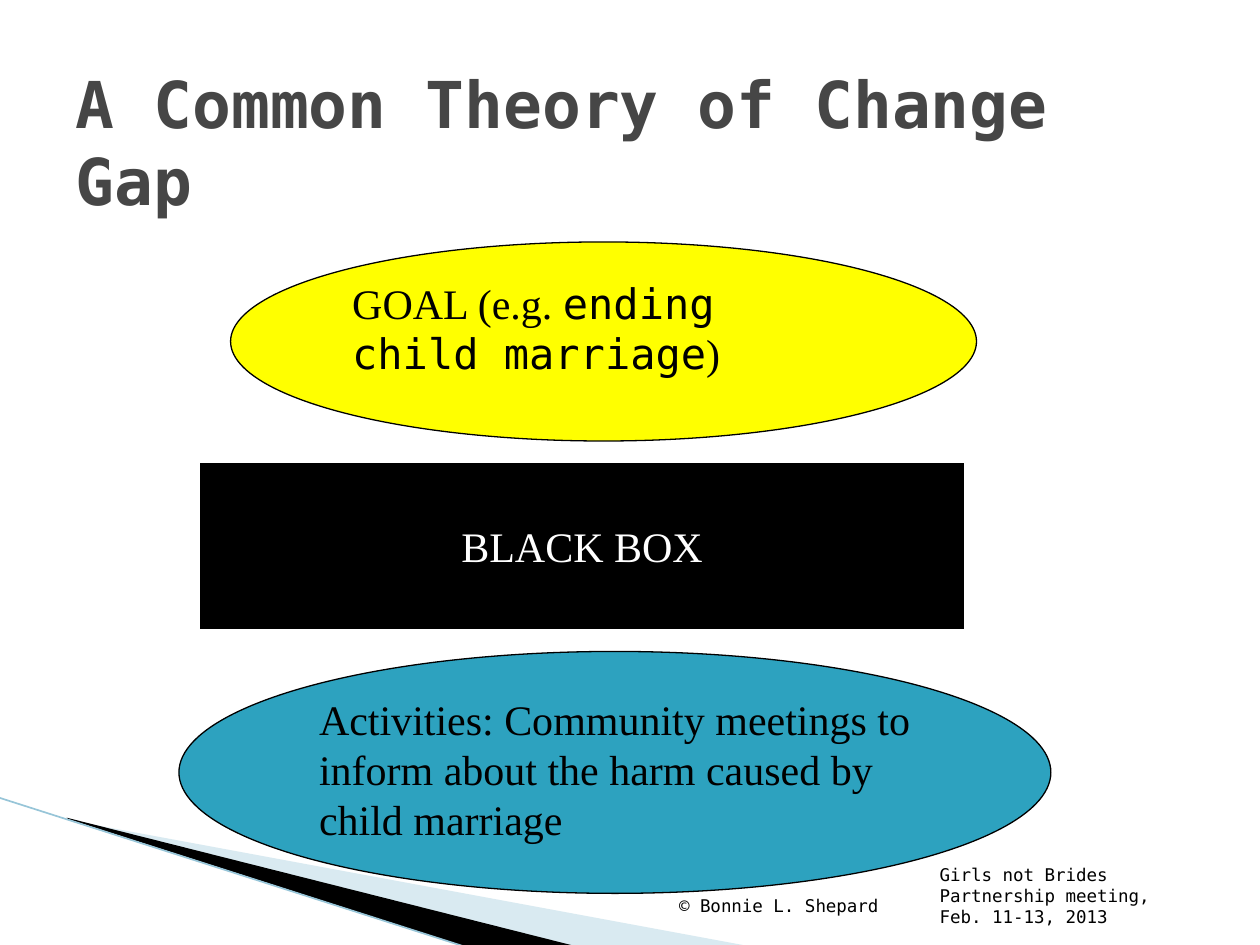
from dataclasses import dataclass

from lxml.etree import SubElement
from pptx import Presentation
from pptx.dml.color import RGBColor
from pptx.enum.shapes import MSO_CONNECTOR as Connector, MSO_SHAPE as Shape
from pptx.enum.text import MSO_ANCHOR as Anchor, MSO_AUTO_SIZE as AutoSize, PP_ALIGN as Align
from pptx.oxml.ns import qn
from pptx.util import Pt

PX = 9144


@dataclass(frozen=True)
class Theme:
    """Colours, fonts and type sizes of the slide."""
    black: str = "000000"
    white: str = "FFFFFF"
    heading: str = "464646"
    goal: str = "FFFF00"
    activities: str = "2DA2BF"
    pale_wedge: str = "A0CBDC"
    edge: str = "97C5D8"
    mono: str = "DejaVu Sans Mono"
    serif: str = "Times New Roman"
    title_size: float = 36.9
    body_size: float = 24
    small_size: float = 10
    outline: float = 0.75
    edge_width: float = 0.95


THEME = Theme()


def emu(*lengths):
    """Turn px lengths into EMU."""
    return [length * PX for length in lengths]


def apply(target, formats):
    """Set each attribute of target from a dict of format values."""
    for key, value in formats.items():
        setattr(target, key, value)


def paint(fill, colour):
    """Give a fill one solid colour."""
    fill.solid()
    fill.fore_color.rgb = RGBColor.from_string(colour)


def write(frame, runs, size, colour, align=Align.LEFT, anchor=Anchor.TOP, bold=False):
    """Write one paragraph of (text, font name) runs into a text frame."""
    apply(frame, {"word_wrap": True, "auto_size": AutoSize.NONE, "vertical_anchor": anchor})
    paragraph = frame.paragraphs[0]
    paragraph.alignment = align
    for text, font_name in runs:
        run = paragraph.add_run()
        run.text = text
        apply(run.font, {"name": font_name, "size": Pt(size), "bold": bold})
        run.font.color.rgb = RGBColor.from_string(colour)


def add_wedge(slide, points, colour, opacity=100):
    """Draw a filled sliver through the given points."""
    builder = slide.shapes.build_freeform(*points[0], scale=PX)
    builder.add_line_segments(points[1:], close=True)
    wedge = builder.convert_to_shape()
    wedge.shadow.inherit = False
    wedge.line.fill.background()
    paint(wedge.fill, colour)
    if opacity < 100:
        tint = wedge.fill._xPr.find(f".//{qn('a:srgbClr')}")
        SubElement(tint, qn("a:alpha"), val=str(opacity * 1000))


def add_corner(slide, box):
    """Draw the slivers and edge line of the bottom left corner."""
    left, top, width, height = box
    right, bottom = left + width, top + height
    add_wedge(slide, [(left + 56, top + 18), (right, bottom - 1),
                      (right - 139, bottom - 1), (left + 56, top + 17)],
              THEME.pale_wedge, 40)
    add_wedge(slide, [(left + 54, top + 16), (left + 458, bottom - 1),
                      (left + 373, bottom), (left + 55, top + 17)], THEME.black)
    edge = slide.shapes.add_connector(
        Connector.STRAIGHT, *emu(left, top, left + 372, bottom))
    edge.line.color.rgb = RGBColor.from_string(THEME.edge)
    edge.line.width = Pt(THEME.edge_width)
    SubElement(edge._element.spPr, qn("a:effectLst"))


def add_title(slide, box, text):
    """Place and format the title placeholder."""
    title = slide.shapes.title
    apply(title, dict(zip(("left", "top", "width", "height"), emu(*box))))
    write(title.text_frame, [(text, THEME.mono)], THEME.title_size, THEME.heading,
          anchor=Anchor.MIDDLE, bold=True)


def add_stage(slide, box, kind, fill, outline, runs, colour=THEME.black, **layout):
    """Draw one stage of the theory of change."""
    stage = slide.shapes.add_shape(kind, *emu(*box))
    stage.shadow.inherit = False
    paint(stage.fill, fill)
    paint(stage.line.fill, outline)
    stage.line.width = Pt(THEME.outline)
    write(stage.text_frame, runs, THEME.body_size, colour, **layout)


def add_stages(slide, box):
    """Stack the goal, the black box and the activities."""
    left, top = box[:2]
    add_stage(slide, (left + 41, top, 592, 158), Shape.OVAL, THEME.goal, THEME.black,
              [("GOAL (e.g. ", THEME.serif), ("ending child marriage", THEME.mono),
               (")", THEME.serif)])
    add_stage(slide, (left + 16, top + 175, 608, 133), Shape.RECTANGLE, THEME.black,
              THEME.white, [("BLACK BOX", THEME.serif)], THEME.white,
              align=Align.CENTER, anchor=Anchor.MIDDLE)
    add_stage(slide, (left, top + 325, 692, 192), Shape.OVAL, THEME.activities, THEME.black,
              [("Activities: Community meetings to inform about the harm caused by "
                "child marriage", THEME.serif)])


def add_footer(slide, box):
    """Place the meeting note and the copyright line."""
    left, top = box[:2]
    notes = [
        ((left + 286, top + 9, 210, 40),
         "Girls not Brides Partnership meeting, Feb. 11-13, 2013", Align.LEFT),
        ((left, top, 257, 40), "© Bonnie L. Shepard", Align.RIGHT),
    ]
    for place, text, align in notes:
        note = slide.shapes.add_textbox(*emu(*place))
        write(note.text_frame, [(text, THEME.mono)], THEME.small_size, THEME.black,
              align=align, anchor=Anchor.BOTTOM)


def main():
    """Build the slide and save it."""
    deck = Presentation()
    deck.slide_width, deck.slide_height = emu(1000, 750)
    slide = deck.slides.add_slide(deck.slide_layouts[5])
    add_corner(slide, (-1, 633, 596, 119))
    add_title(slide, (50, 58, 900, 108), "A Common Theory of Change Gap")
    add_stages(slide, (142, 192, 692, 517))
    add_footer(slide, (450, 692, 496, 49))
    deck.save("out.pptx")


if __name__ == "__main__":
    main()
